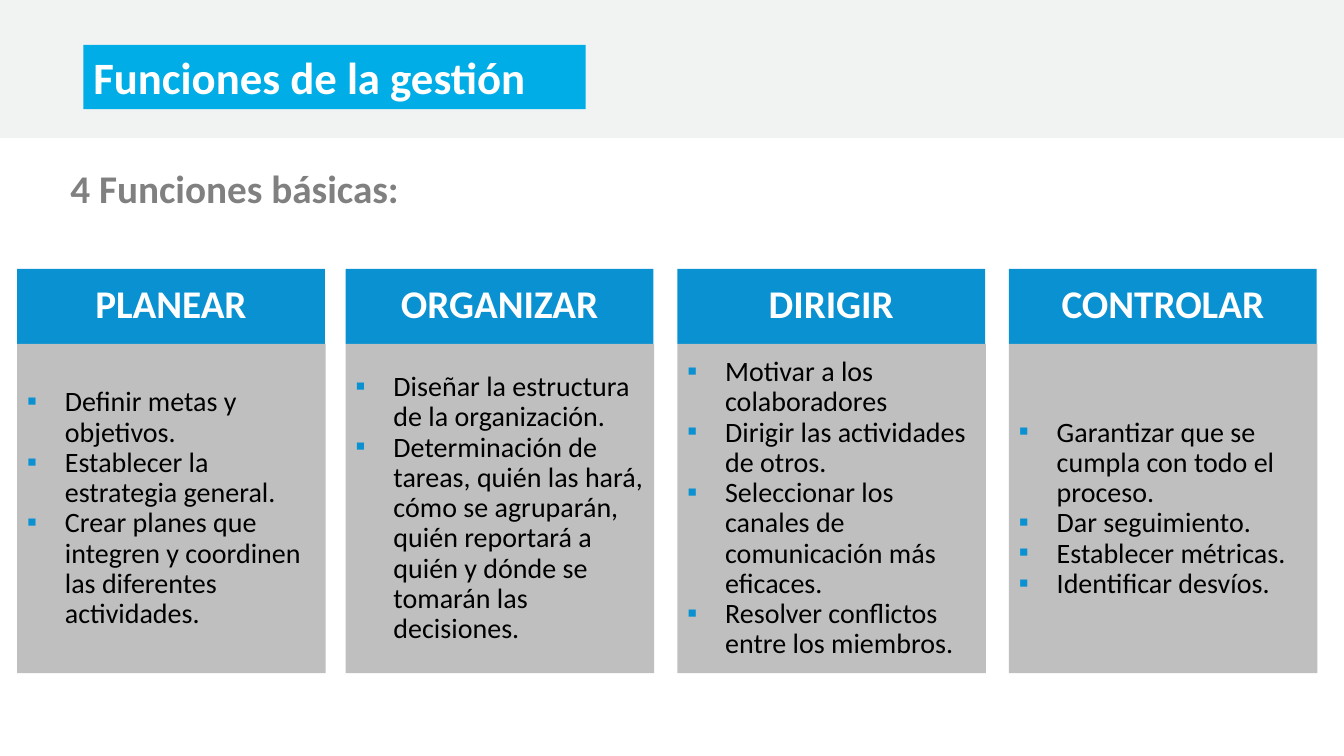
from lxml import etree
from pptx import Presentation
from pptx.dml.color import RGBColor
from pptx.enum.shapes import MSO_SHAPE
from pptx.enum.text import MSO_ANCHOR, PP_ALIGN
from pptx.oxml.ns import qn
from pptx.util import Pt

WHITE = RGBColor(0xFF, 0xFF, 0xFF)
BLACK = RGBColor(0x00, 0x00, 0x00)
PALE_GRAY = RGBColor(0xF1, 0xF3, 0xF2)
MID_GRAY = RGBColor(0xBF, 0xBF, 0xBF)
TEXT_GRAY = RGBColor(0x80, 0x80, 0x80)
CYAN = RGBColor(0x00, 0xAD, 0xE6)
BLUE = RGBColor(0x09, 0x91, 0xD1)

COLUMNS = [
    (12.24, "PLANEAR", [
        "Definir metas y objetivos.",
        "Establecer la estrategia general.",
        "Crear planes que integren y coordinen las diferentes actividades.",
    ]),
    (246.96, "ORGANIZAR", [
        "Diseñar la estructura de la organización.",
        "Determinación de tareas, quién las hará, cómo se agruparán, "
        "quién reportará a quién y dónde se tomarán las decisiones.",
    ]),
    (483.84, "DIRIGIR", [
        "Motivar a los colaboradores",
        "Dirigir las actividades de otros.",
        "Seleccionar los canales de comunicación más eficaces.",
        "Resolver conflictos entre los miembros.",
    ]),
    (720.72, "CONTROLAR", [
        "Garantizar que se cumpla con todo el proceso.",
        "Dar seguimiento.",
        "Establecer métricas.",
        "Identificar desvíos.",
    ]),
]


def add_block(left, top, width, height, color):
    shape = slide.shapes.add_shape(
        MSO_SHAPE.RECTANGLE, Pt(left), Pt(top), Pt(width), Pt(height))
    shape.shadow.inherit = False
    shape.fill.solid()
    shape.fill.fore_color.rgb = color
    shape.line.fill.background()
    shape.text_frame.word_wrap = True
    return shape


def write(paragraph, text, size, color, bold, align, spacing):
    paragraph.text = text
    paragraph.alignment = align
    paragraph.line_spacing = spacing
    paragraph.font.name = "Calibri"
    paragraph.font.size = Pt(size)
    paragraph.font.bold = bold
    paragraph.font.color.rgb = color


presentation = Presentation()
presentation.slide_width = Pt(960)
presentation.slide_height = Pt(540)
slide = presentation.slides.add_slide(presentation.slide_layouts[5])

# Header band, placed behind the title
band = add_block(0, 0, 960, 98, PALE_GRAY)
band.line.color.rgb = PALE_GRAY
band.line.width = Pt(1)
slide.shapes._spTree.insert(2, band._element)

# Title
title = slide.shapes.title
title.left, title.top, title.width, title.height = Pt(59.5), Pt(32), Pt(358.8), Pt(46)
title.fill.solid()
title.fill.fore_color.rgb = CYAN
title.text_frame.vertical_anchor = MSO_ANCHOR.TOP
write(title.text_frame.paragraphs[0], "Funciones de la gestión",
      32, WHITE, True, PP_ALIGN.JUSTIFY, 1.0)

# Subtitle
subtitle = slide.shapes.add_textbox(Pt(43.2), Pt(107.5), Pt(898), Pt(54.7))
subtitle.text_frame.word_wrap = True
subtitle.text_frame.vertical_anchor = MSO_ANCHOR.MIDDLE
write(subtitle.text_frame.paragraphs[0], "4 Funciones básicas:",
      28, TEXT_GRAY, True, PP_ALIGN.LEFT, Pt(32))

# Four columns: heading above a bulleted body
for left, heading, items in COLUMNS:
    header = add_block(left, 192.1, 219.8, 53.5, BLUE)
    header.text_frame.margin_top = header.text_frame.margin_bottom = Pt(11.5)
    header.text_frame.vertical_anchor = MSO_ANCHOR.TOP
    write(header.text_frame.paragraphs[0], heading,
          28, WHITE, True, PP_ALIGN.CENTER, 0.9)

    body = add_block(left, 245.6, 220.4, 235.3, MID_GRAY)
    frame = body.text_frame
    frame.vertical_anchor = MSO_ANCHOR.MIDDLE
    for index, item in enumerate(items):
        paragraph = frame.add_paragraph() if index else frame.paragraphs[0]
        properties = paragraph._p.get_or_add_pPr()
        properties.set("marL", str(Pt(27)))
        properties.set("indent", str(-Pt(27)))
        bullet_color = etree.SubElement(properties, qn("a:buClr"))
        etree.SubElement(bullet_color, qn("a:srgbClr"), val=str(BLUE))
        etree.SubElement(properties, qn("a:buFont"), typeface="Calibri")
        etree.SubElement(properties, qn("a:buChar"), char="▪")
        write(paragraph, item, 20, BLACK, False, PP_ALIGN.LEFT, 0.9)

presentation.save("out.pptx")
